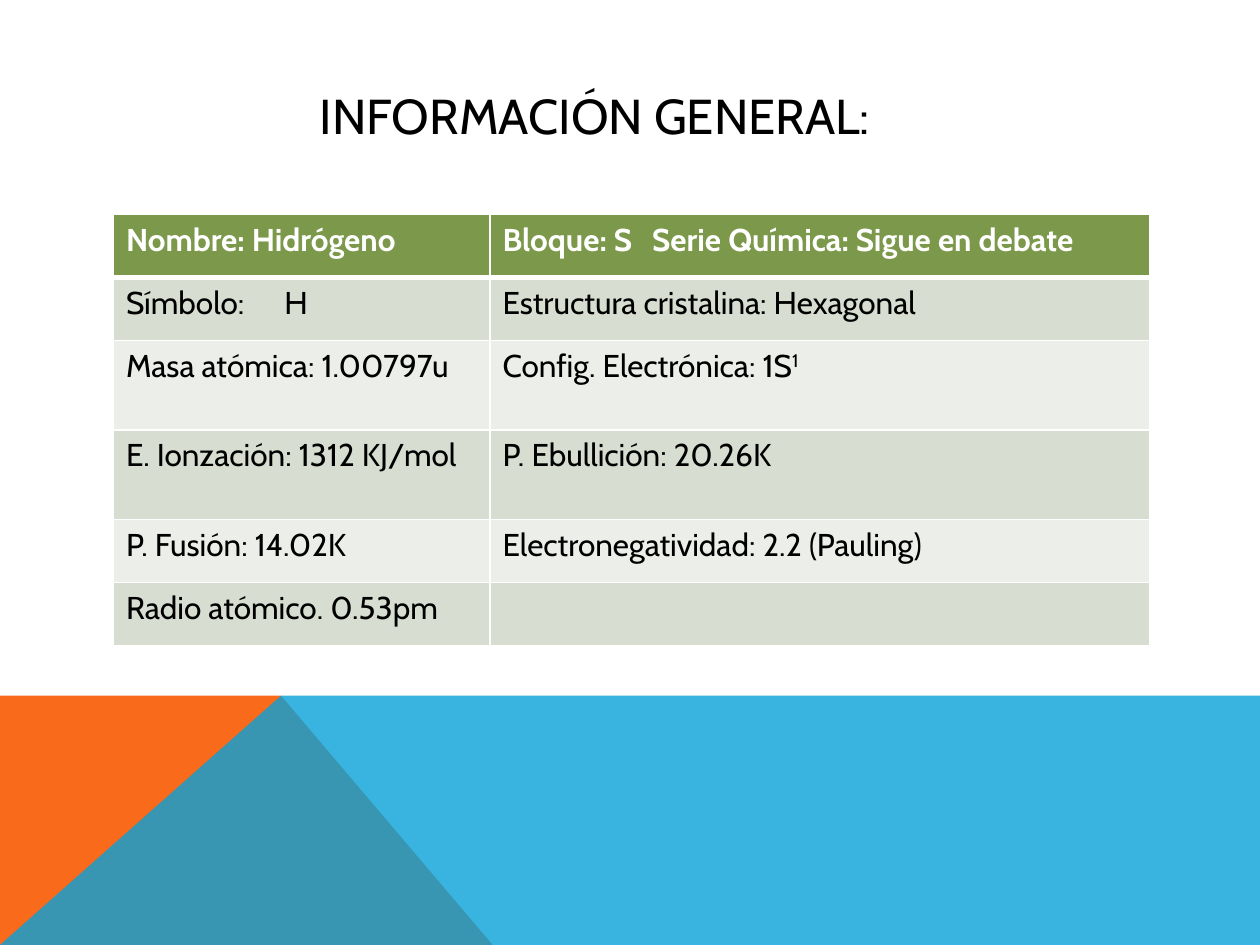
from dataclasses import dataclass

from lxml.etree import SubElement
from pptx import Presentation
from pptx.dml.color import RGBColor as Color
from pptx.enum.text import MSO_ANCHOR as Anchor
from pptx.oxml.ns import qn
from pptx.util import Pt


@dataclass(frozen=True)
class Theme:
    font: str = "Cabin"
    title_size: int = 28
    body_size: int = 18
    text: str = "000000"
    white: str = "FFFFFF"
    header: str = "7C984A"
    bands: tuple = ("D7DDD0", "ECEFE9")
    orange: str = "F96A1B"
    blue: str = "08A1D9"


THEME = Theme()
SLIDE_WIDTH, SLIDE_HEIGHT = 720, 540
LEFT, CONTENT_WIDTH = 64.8, 592.5
HORIZON, PEAK, SLOPE_END = 397.6, 160.6, 281.5

COLUMN_WIDTHS = (215.2, 377.3)
ROW_HEIGHTS = (36, 36, 51.2, 51.2, 36, 36)
# A cell is a list of runs; a run that starts with "^" is superscript.
ROWS = (
    (["Nombre: Hidrógeno"], ["Bloque: S\tSerie Química: Sigue en debate"]),
    (["Símbolo:\tH"], ["Estructura cristalina: Hexagonal"]),
    (["Masa atómica: 1.00797u"], ["Config. Electrónica: 1S", "^1"]),
    (["E. Ionzación: 1312 KJ/mol"], ["P. Ebullición: 20.26K"]),
    (["P. Fusión: 14.02K"], ["Electronegatividad: 2.2 (Pauling)"]),
    (["Radio atómico. 0.53pm"], []),
)
TAB_STOPS = {(0, 1): 85.5, (1, 0): 90.5}


def set_fill(fill, color):
    fill.solid()
    fill.fore_color.rgb = Color.from_string(color)


def add_run(paragraph, text, size, color, bold=False):
    run = paragraph.add_run()
    run.text = text.removeprefix("^")
    run.font.name = THEME.font
    run.font.size = Pt(size)
    run.font.bold = bold
    run.font.color.rgb = Color.from_string(color)
    if text.startswith("^"):
        run._r.get_or_add_rPr().set("baseline", "30000")


def add_polygon(slide, points, color, opacity=100):
    start, *rest = [(Pt(x), Pt(y)) for x, y in points]
    builder = slide.shapes.build_freeform(*start)
    builder.add_line_segments(rest, close=True)
    shape = builder.convert_to_shape()
    shape.shadow.inherit = False
    shape.line.fill.background()
    set_fill(shape.fill, color)
    if opacity < 100:
        rgb = shape._element.spPr.find(".//" + qn("a:srgbClr"))
        SubElement(rgb, qn("a:alpha"), val=str(opacity * 1000))


def add_title(slide, text):
    box = slide.shapes.add_textbox(Pt(LEFT), Pt(28.8), Pt(CONTENT_WIDTH), Pt(73.4))
    frame = box.text_frame
    frame.word_wrap = True
    frame.vertical_anchor = Anchor.MIDDLE
    frame.margin_left = Pt(118)
    add_run(frame.paragraphs[0], text, THEME.title_size, THEME.text)


def set_borders(cell, bottom_width):
    properties = cell._tc.get_or_add_tcPr()
    for side, width in (("L", 1), ("R", 1), ("T", 1), ("B", bottom_width)):
        line = SubElement(properties, qn(f"a:ln{side}"), w=str(Pt(width)))
        solid = SubElement(line, qn("a:solidFill"))
        SubElement(solid, qn("a:srgbClr"), val=THEME.white)


def add_tab_stop(paragraph, position):
    tabs = SubElement(paragraph._p.get_or_add_pPr(), qn("a:tabLst"))
    SubElement(tabs, qn("a:tab"), pos=str(Pt(position)), algn="l")


def fill_cell(cell, runs, row, tab_stop):
    header = row == 0
    set_borders(cell, 3 if header else 1)
    set_fill(cell.fill, THEME.header if header else THEME.bands[(row - 1) % 2])
    paragraph = cell.text_frame.paragraphs[0]
    if tab_stop:
        add_tab_stop(paragraph, tab_stop)
    for text in runs:
        color = THEME.white if header else THEME.text
        add_run(paragraph, text, THEME.body_size, color, header)


def add_data_table(slide):
    frame = slide.shapes.add_table(
        len(ROWS), len(COLUMN_WIDTHS), Pt(LEFT), Pt(122.6),
        Pt(CONTENT_WIDTH), Pt(sum(ROW_HEIGHTS)))
    table = frame.table
    for column, width in zip(table.columns, COLUMN_WIDTHS):
        column.width = Pt(width)
    for row, (cells, height) in enumerate(zip(ROWS, ROW_HEIGHTS)):
        table.rows[row].height = Pt(height)
        for column, runs in enumerate(cells):
            fill_cell(table.cell(row, column), runs, row, TAB_STOPS.get((row, column)))


def main():
    presentation = Presentation()
    presentation.slide_width = Pt(SLIDE_WIDTH)
    presentation.slide_height = Pt(SLIDE_HEIGHT)
    slide = presentation.slides.add_slide(presentation.slide_layouts[6])
    set_fill(slide.background.fill, THEME.white)

    bottom_left, peak = (0, SLIDE_HEIGHT), (PEAK, HORIZON)
    add_polygon(slide, [bottom_left, (0, HORIZON), peak, (SLOPE_END, SLIDE_HEIGHT)],
                THEME.orange)
    add_polygon(slide, [bottom_left, peak, (SLIDE_WIDTH, HORIZON),
                        (SLIDE_WIDTH, SLIDE_HEIGHT)], THEME.blue, opacity=80)
    add_title(slide, "INFORMACIÓN GENERAL:")
    add_data_table(slide)
    presentation.save("out.pptx")


if __name__ == "__main__":
    main()
